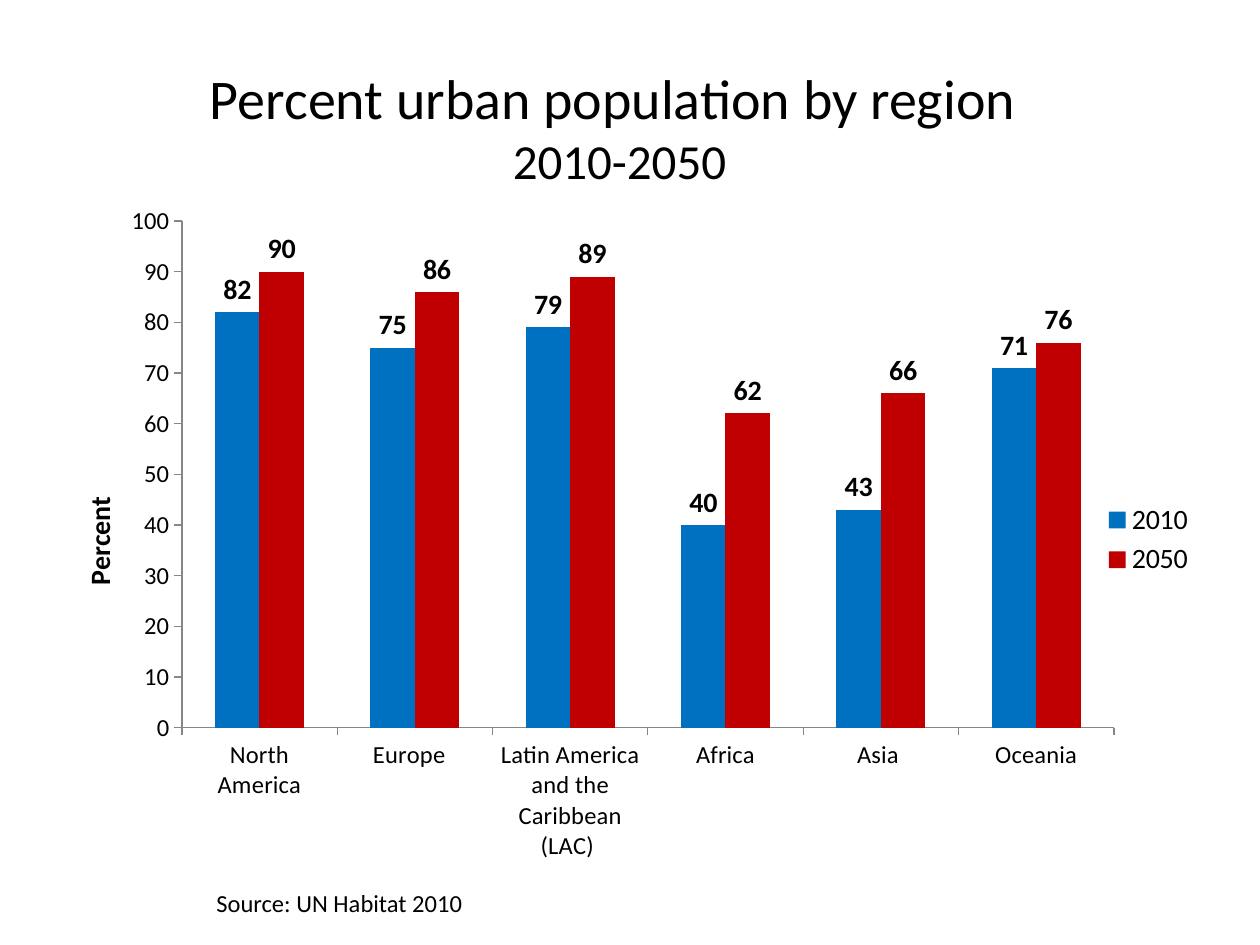
from dataclasses import dataclass

from lxml.etree import SubElement
from pptx import Presentation
from pptx.chart.data import CategoryChartData
from pptx.dml.color import RGBColor
from pptx.enum.chart import (XL_CHART_TYPE, XL_LABEL_POSITION,
                             XL_LEGEND_POSITION, XL_TICK_MARK)
from pptx.enum.text import MSO_ANCHOR, PP_ALIGN
from pptx.oxml.ns import qn
from pptx.util import Inches, Pt


@dataclass(frozen=True)
class Theme:
    font: str = "Calibri"
    ink: str = "000000"
    axis: str = "868686"
    bars: tuple = ("0070C0", "C00000")
    title: int = 32
    years: int = 28
    emphasis: int = 16
    small: int = 14


THEME = Theme()
WIDTH, HEIGHT = 10, 7.5

REGIONS = ["North America", "Europe  ", "Latin America and the Caribbean (LAC) ",
           "Africa", "Asia ", "Oceania"]
URBAN_PERCENT = {
    "2010": [82, 75, 79, 40, 43, 71],
    "2050": [90, 86, 89, 62, 66, 76],
}


def style_font(font, size, bold=False):
    font.name = THEME.font
    font.size = Pt(size)
    font.bold = bold
    font.color.rgb = RGBColor.from_string(THEME.ink)


def add_text(slide, box, lines, align=PP_ALIGN.LEFT, anchor=MSO_ANCHOR.TOP, wrap=True):
    """Write (text, size) lines as one paragraph with line breaks between them."""
    frame = slide.shapes.add_textbox(*map(Inches, box)).text_frame
    frame.word_wrap = wrap
    frame.vertical_anchor = anchor
    paragraph = frame.paragraphs[0]
    paragraph.alignment = align
    for number, (text, size) in enumerate(lines):
        if number:
            paragraph.add_line_break()
        run = paragraph.add_run()
        run.text = text
        style_font(run.font, size)


def set_layout(element, position, **settings):
    """Place a chart part by hand, in shares of the chart's size."""
    layout = element.find(qn("c:layout"))
    if layout is None:
        layout = SubElement(element, qn("c:layout"))
        element.insert(position, layout)
    manual = SubElement(layout, qn("c:manualLayout"))
    for tag, value in settings.items():
        SubElement(manual, qn(f"c:{tag}")).set("val", str(value))


def style_axis(axis):
    axis.has_major_gridlines = False
    axis.major_tick_mark = XL_TICK_MARK.OUTSIDE
    axis.minor_tick_mark = XL_TICK_MARK.NONE
    axis.format.line.color.rgb = RGBColor.from_string(THEME.axis)
    axis.format.line.width = Pt(0.75)
    style_font(axis.tick_labels.font, THEME.small)


def style_percent_axis(axis):
    style_axis(axis)
    axis.minimum_scale, axis.maximum_scale, axis.major_unit = 0, 100, 10
    axis.has_title = True
    title = axis.axis_title
    title.text_frame.text = "Percent"
    style_font(title.text_frame.paragraphs[0].runs[0].font, THEME.emphasis, bold=True)
    set_layout(title._element, 1, xMode="edge", yMode="edge", x=0.02, y=0.43)


def style_bars(series, color):
    series.format.fill.solid()
    series.format.fill.fore_color.rgb = RGBColor.from_string(color)
    series.invert_if_negative = False
    labels = series.data_labels
    labels.show_value = True
    labels.position = XL_LABEL_POSITION.OUTSIDE_END
    style_font(labels.font, THEME.emphasis, bold=True)


def add_urban_chart(slide, box):
    data = CategoryChartData(number_format="0")
    data.categories = REGIONS
    for year, values in URBAN_PERCENT.items():
        data.add_series(year, values)
    chart = slide.shapes.add_chart(
        XL_CHART_TYPE.COLUMN_CLUSTERED, *map(Inches, box), data).chart
    chart.has_title = False
    style_font(chart.font, THEME.small)

    plot = chart.plots[0]
    plot.gap_width, plot.overlap = 150, 0
    plot.vary_by_categories = False
    for series, color in zip(plot.series, THEME.bars):
        style_bars(series, color)
    style_axis(chart.category_axis)
    style_percent_axis(chart.value_axis)

    chart.has_legend = True
    chart.legend.position = XL_LEGEND_POSITION.RIGHT
    chart.legend.include_in_layout = False
    style_font(chart.legend.font, THEME.emphasis)

    plot_area = chart._chartSpace.find(".//" + qn("c:plotArea"))
    set_layout(plot_area, 0, layoutTarget="inner", xMode="edge", yMode="edge",
               x=0.112, y=0.033, w=0.807, h=0.742)


def build_slide(slide):
    left, top = WIDTH / 24, HEIGHT * 0.21
    chart_width, chart_height = WIDTH - 2 * left, 5.42
    add_text(slide, (WIDTH / 15, left, WIDTH * 0.85, 1.17),
             [("Percent urban population by region ", THEME.title),
              ("2010-2050", THEME.years)],
             align=PP_ALIGN.CENTER, anchor=MSO_ANCHOR.MIDDLE)
    add_urban_chart(slide, (left, top, chart_width, chart_height))
    add_text(slide, (top, top + chart_height, 2.43, 0.34),
             [(" Source: UN Habitat 2010", THEME.small)], wrap=False)


def main():
    deck = Presentation()
    deck.slide_width, deck.slide_height = Inches(WIDTH), Inches(HEIGHT)
    build_slide(deck.slides.add_slide(deck.slide_layouts[6]))
    deck.save("out.pptx")


if __name__ == "__main__":
    main()
